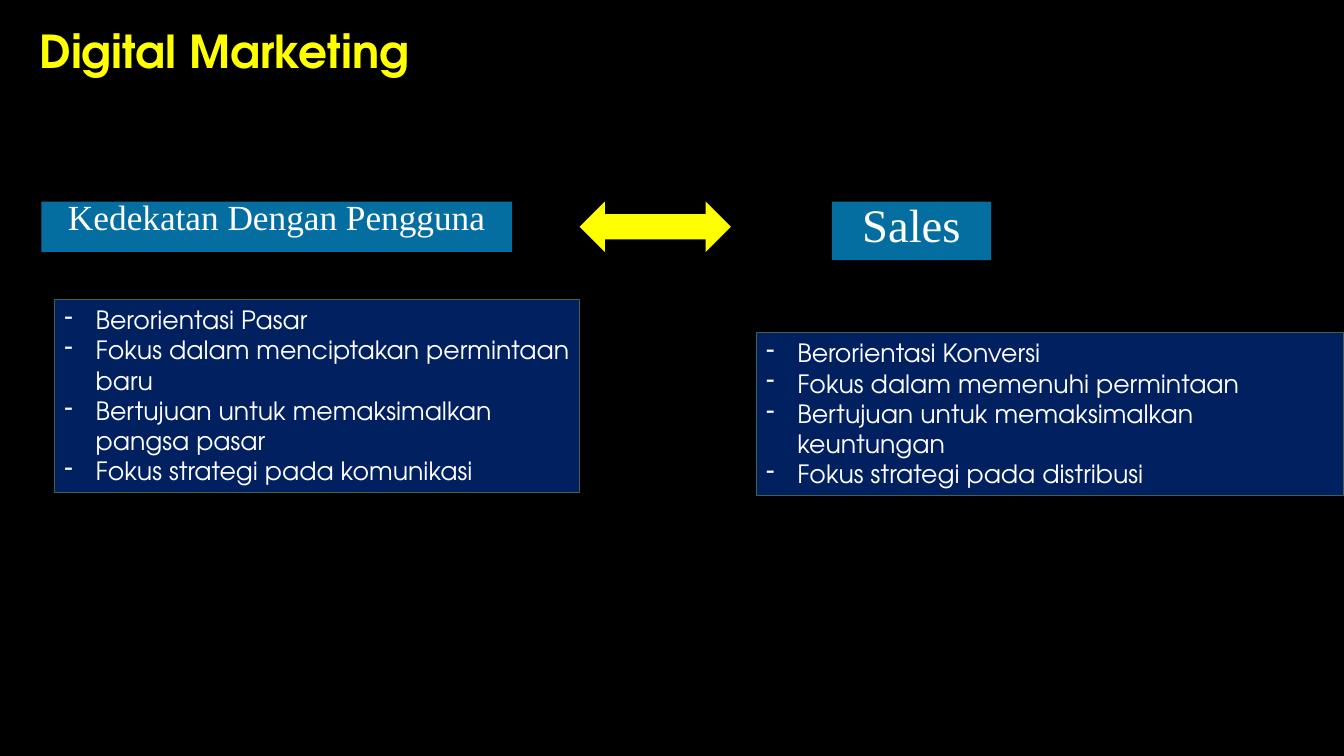
from lxml import etree
from pptx import Presentation
from pptx.dml.color import RGBColor
from pptx.enum.shapes import MSO_SHAPE
from pptx.enum.text import MSO_ANCHOR, MSO_AUTO_SIZE, PP_ALIGN
from pptx.oxml.ns import qn
from pptx.util import Inches, Pt

RECTANGLE = MSO_SHAPE.RECTANGLE
DOUBLE_ARROW = MSO_SHAPE.LEFT_RIGHT_ARROW
TOP, BOTTOM = MSO_ANCHOR.TOP, MSO_ANCHOR.BOTTOM
NO_AUTOFIT = MSO_AUTO_SIZE.NONE
LEFT, CENTER = PP_ALIGN.LEFT, PP_ALIGN.CENTER

SANS = "TeX Gyre Adventor"
SERIF = "Times New Roman"
COLORS = {
    "background": "000000",
    "accent": "FFFF00",
    "heading": "056EA0",
    "panel": "002060",
    "border": "455F51",
    "text": "FFFFFF",
}
INDENT = Inches(0.31)

MARKETING_POINTS = [
    "Berorientasi Pasar",
    "Fokus dalam menciptakan permintaan baru",
    "Bertujuan untuk memaksimalkan pangsa pasar",
    "Fokus strategi pada komunikasi",
]
SALES_POINTS = [
    "Berorientasi Konversi",
    "Fokus dalam memenuhi permintaan",
    "Bertujuan untuk memaksimalkan keuntungan",
    "Fokus strategi pada distribusi",
]


def color(name):
    """Return the named colour."""
    return RGBColor.from_string(COLORS[name])


def set_font(paragraph, typeface, size, color_name, bold=False):
    """Format all the text of a paragraph."""
    font = paragraph.font
    font.name = typeface
    font.size = Pt(size)
    font.bold = bold
    font.color.rgb = color(color_name)


def add_dash(paragraph):
    """Give a paragraph a hanging dash bullet."""
    properties = paragraph._p.get_or_add_pPr()
    properties.set("marL", str(INDENT))
    properties.set("indent", str(-INDENT))
    etree.SubElement(properties, qn("a:buChar")).set("char", "-")


def add_filled_shape(slide, kind, box, fill):
    """Add a flat shape without an outline."""
    shape = slide.shapes.add_shape(kind, *map(Inches, box))
    shape.shadow.inherit = False
    shape.fill.solid()
    shape.fill.fore_color.rgb = color(fill)
    shape.line.fill.background()
    return shape


def add_title(slide, text):
    """Place and format the slide title."""
    title = slide.shapes.title
    title.left, title.top = Inches(0.29), Inches(0.25)
    title.width, title.height = Inches(6.37), Inches(0.58)
    frame = title.text_frame
    frame.text = text
    frame.vertical_anchor = BOTTOM
    frame.auto_size = NO_AUTOFIT
    paragraph = frame.paragraphs[0]
    paragraph.alignment = LEFT
    paragraph.line_spacing = 0.9
    set_font(paragraph, SANS, 32.4, "accent", bold=True)


def add_heading(slide, box, text, size, line_spacing):
    """Add a centred heading on a blue bar."""
    frame = add_filled_shape(slide, RECTANGLE, box, "heading").text_frame
    frame.text = text
    frame.word_wrap = True
    frame.vertical_anchor = TOP
    paragraph = frame.paragraphs[0]
    paragraph.alignment = CENTER
    paragraph.line_spacing = line_spacing
    set_font(paragraph, SERIF, size, "text")


def add_points(slide, box, points):
    """Add a bordered panel with a dashed list."""
    panel = add_filled_shape(slide, RECTANGLE, box, "panel")
    panel.line.color.rgb = color("border")
    panel.line.width = Pt(0.75)
    frame = panel.text_frame
    frame.text = "\n".join(points)
    frame.word_wrap = True
    frame.vertical_anchor = TOP
    for paragraph in frame.paragraphs:
        paragraph.alignment = LEFT
        add_dash(paragraph)
        set_font(paragraph, SANS, 18, "text")


def main():
    """Build the slide and save it."""
    presentation = Presentation()
    presentation.slide_width = Inches(13.33)
    presentation.slide_height = Inches(7.5)
    slide = presentation.slides.add_slide(presentation.slide_layouts[5])
    slide.background.fill.solid()
    slide.background.fill.fore_color.rgb = color("background")

    add_title(slide, "Digital Marketing")
    add_heading(slide, (0.41, 2, 4.67, 0.5), "Kedekatan Dengan Pengguna", 25.2, 0.7)
    add_points(slide, (0.54, 2.97, 5.21, 1.92), MARKETING_POINTS)
    add_points(slide, (7.5, 3.3, 5.83, 1.62), SALES_POINTS)
    add_heading(slide, (8.25, 2, 1.58, 0.58), "Sales", 33.3, 0.8)
    add_filled_shape(slide, DOUBLE_ARROW, (5.75, 2, 1.5, 0.5), "accent")
    presentation.save("out.pptx")


if __name__ == "__main__":
    main()
